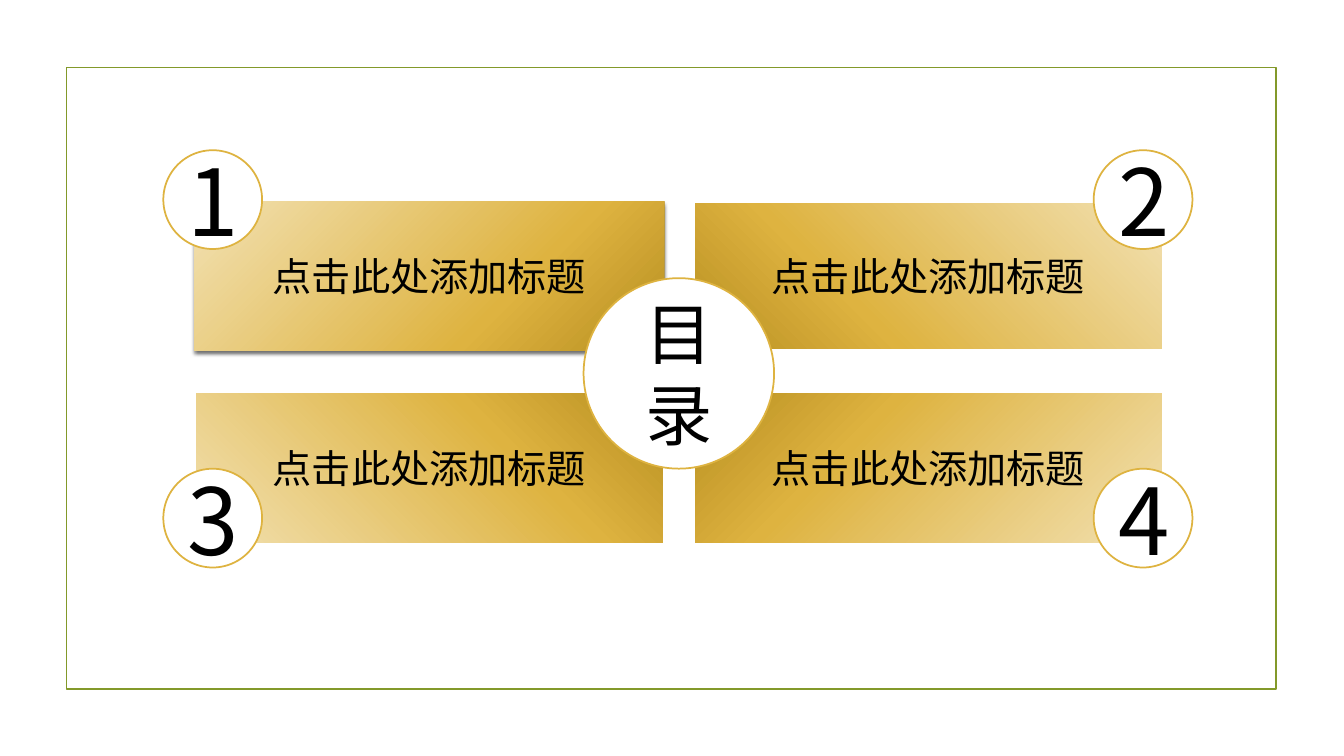
import lxml.etree
import pptx
import pptx.dml.color
import pptx.enum.shapes
import pptx.enum.text
import pptx.oxml
import pptx.oxml.ns
import pptx.util

COLORS = {"frame": "83992A", "gold": "DEB340", "dark": "B78E20",
          "pale": "F2E1B3", "white": "FFFFFF", "black": "000000"}
PANEL_STOPS = [(0, "dark"), (34, "gold"), (100, "pale"), (100, "gold")]
SHAPE = pptx.enum.shapes.MSO_SHAPE
COLUMNS = 40


def rgb(name):
    return pptx.dml.color.RGBColor.from_string(COLORS[name])


def write(sp, text, size, font="Noto Sans CJK SC", color="black"):
    tf = sp.text_frame
    tf.word_wrap = True
    tf.vertical_anchor = pptx.enum.text.MSO_ANCHOR.MIDDLE
    p = tf.paragraphs[0]
    p.alignment = pptx.enum.text.PP_ALIGN.CENTER
    r = p.add_run()
    r.text = text
    r.font.size = pptx.util.Pt(size)
    r.font.name = font
    r.font.color.rgb = rgb(color)
    ea = lxml.etree.SubElement(r.font._element, pptx.oxml.ns.qn("a:ea"))
    ea.set("typeface", font)


class Deck:
    """Draws styled elements on a square grid of 40 columns."""

    def __init__(self):
        self.prs = pptx.Presentation()
        self.prs.slide_width = pptx.util.Inches(13.333)
        self.prs.slide_height = pptx.util.Inches(7.5)
        self.cell = self.prs.slide_width / COLUMNS
        self.s = self.prs.slides.add_slide(self.prs.slide_layouts[6])

    def shape(self, kind, x, y, w, h, line=None, width=1.25, fill=None):
        sp = self.s.shapes.add_shape(kind, *(round(v * self.cell) for v in (x, y, w, h)))
        sp.shadow.inherit = False
        if fill:
            sp.fill.solid()
            sp.fill.fore_color.rgb = rgb(fill)
        else:
            sp.fill.background()
        if line:
            sp.line.color.rgb = rgb(line)
            sp.line.width = pptx.util.Pt(width)
        else:
            sp.line.fill.background()
        return sp

    def frame(self, x, y, w, h):
        self.shape(SHAPE.RECTANGLE, x, y, w, h, line="frame")

    def panel(self, x, y, w, h, text, angle, raised=False):
        sp = self.shape(SHAPE.RECTANGLE, x, y, w, h, width=2,
                        line=None if raised else "white")
        self.gradient(sp, angle)
        if raised:
            self.drop_shadow(sp)
        write(sp, text, 28)

    def circle(self, x, y, diameter, text, **style):
        sp = self.shape(SHAPE.OVAL, x, y, diameter, diameter, line="gold", fill="white")
        write(sp, text, **style)

    def gradient(self, sp, angle):
        stops = "".join(
            f'<a:gs pos="{pos * 1000}"><a:srgbClr val="{COLORS[name]}"/></a:gs>'
            for pos, name in PANEL_STOPS)
        grad = pptx.oxml.parse_xml(
            f'<a:gradFill {pptx.oxml.ns.nsdecls("a")} rotWithShape="1"><a:gsLst>{stops}</a:gsLst>'
            f'<a:lin ang="{angle * 60000}" scaled="0"/></a:gradFill>')
        pr = sp._element.spPr
        pr.replace(pr.find(pptx.oxml.ns.qn("a:noFill")), grad)

    def drop_shadow(self, sp, blur=3, distance=2, opacity=60):
        effects = sp._element.spPr.find(pptx.oxml.ns.qn("a:effectLst"))
        effects.append(pptx.oxml.parse_xml(
            f'<a:outerShdw {pptx.oxml.ns.nsdecls("a")} blurRad="{pptx.util.Pt(blur)}" '
            f'dist="{pptx.util.Pt(distance)}" dir="5400000" rotWithShape="0">'
            f'<a:srgbClr val="{COLORS["black"]}"><a:alpha val="{opacity * 1000}"/>'
            '</a:srgbClr></a:outerShdw>'))


def main():
    deck = Deck()
    deck.frame(1.98, 2.01, 36, 18.5)
    panel_x, panel_rows = (5.79, 20.64), ((6, 4.44), (11.67, 4.53))
    badge_x, badge_y = (4.86, 32.55), (4.47, 13.95)
    angles = ((225, 315), (135, 45))
    cells = [(row, col) for row in range(2) for col in range(2)]
    for row, col in cells:
        y, h = panel_rows[row]
        deck.panel(panel_x[col], y, 13.98, h, "点击此处添加标题",
                   angles[row][col], raised=(row, col) == (0, 0))
    deck.circle(17.37, 8.28, 5.67, "目录", size=48)
    for number, (row, col) in enumerate(cells, 1):
        deck.circle(badge_x[col], badge_y[row], 2.94, str(number),
                    size=66, font="Noto Sans CJK JP")
    deck.prs.save("out.pptx")


if __name__ == "__main__":
    main()
